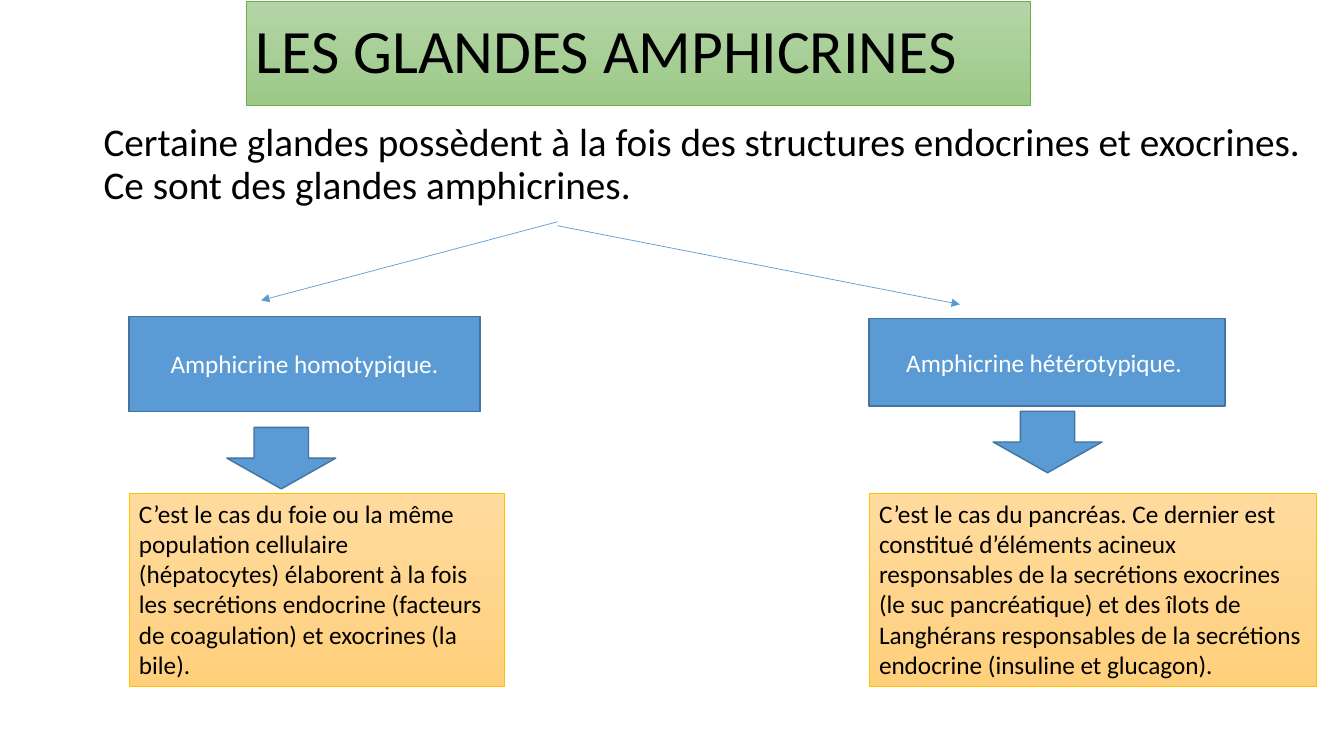
from lxml.etree import SubElement
from pptx import Presentation
from pptx.dml.color import RGBColor
from pptx.enum.shapes import MSO_CONNECTOR as Connector, MSO_SHAPE as Shape
from pptx.enum.text import MSO_ANCHOR as Anchor, PP_ALIGN as Align
from pptx.oxml.ns import qn
from pptx.util import Inches, Pt

BLACK = RGBColor(0x00, 0x00, 0x00)
WHITE = RGBColor(0xFF, 0xFF, 0xFF)
BLUE = RGBColor(0x5B, 0x9B, 0xD5)
DARK_BLUE = RGBColor(0x43, 0x73, 0x9E)
GREEN = RGBColor(0x70, 0xAD, 0x47)
GREEN_FADE = (RGBColor(0xB5, 0xD5, 0xA7), RGBColor(0x9C, 0xC9, 0x87))
GOLD = RGBColor(0xFF, 0xC0, 0x00)
GOLD_FADE = (RGBColor(0xFF, 0xDB, 0x9E), RGBColor(0xFF, 0xD0, 0x7C))

TITLE = "LES GLANDES AMPHICRINES"
INTRO = ("Certaine glandes possèdent à la fois des structures endocrines et "
         "exocrines. Ce sont des glandes amphicrines.")
LIVER = ("C’est le cas du foie ou la même population cellulaire (hépatocytes) "
         "élaborent à la fois les secrétions endocrine (facteurs de coagulation) "
         "et exocrines (la bile).")
PANCREAS = ("C’est le cas du pancréas. Ce dernier est constitué d’éléments acineux "
            "responsables de la secrétions exocrines (le suc pancréatique) et des "
            "îlots de Langhérans responsables de la secrétions endocrine "
            "(insuline et glucagon).")


def set_all(target, values):
    """Set every attribute named in a dict of format values."""
    for name, value in values.items():
        setattr(target, name, value)


def write(box, text, size, color, anchor=Anchor.TOP, **para_format):
    """Write one formatted paragraph into a box."""
    set_all(box.text_frame, {"word_wrap": True, "vertical_anchor": anchor})
    para = box.text_frame.paragraphs[0]
    set_all(para, {"alignment": Align.LEFT, **para_format})
    span = para.add_run()
    span.text = text
    set_all(span.font, {"name": "Calibri", "size": Pt(size)})
    span.font.color.rgb = color


def add_block(page, kind, area, line_color, line_width):
    """Add a preset shape with an outline and no shadow."""
    block = page.shapes.add_shape(kind, *map(Inches, area))
    block.shadow.inherit = False
    block.line.color.rgb = line_color
    block.line.width = Pt(line_width)
    return block


def add_blue(page, kind, area):
    """Add a plain blue shape."""
    block = add_block(page, kind, area, DARK_BLUE, 1)
    block.fill.solid()
    block.fill.fore_color.rgb = BLUE
    return block


def add_faded(page, area, fade, line_color):
    """Add a rectangle whose fill fades from top to bottom."""
    block = add_block(page, Shape.RECTANGLE, area, line_color, 0.5)
    block.fill.gradient()
    block.fill.gradient_angle = 270
    for stop, color in zip(block.fill.gradient_stops, fade):
        stop.color.rgb = color
    return block


def add_arrow(page, start, end):
    """Add a thin blue line that ends in a triangle."""
    arrow = page.shapes.add_connector(
        Connector.STRAIGHT, *map(Inches, (*start, *end)))
    arrow.line.color.rgb = BLUE
    arrow.line.width = Pt(0.5)
    SubElement(arrow.line._get_or_add_ln(), qn("a:tailEnd"), type="triangle")
    SubElement(arrow._element.spPr, qn("a:effectLst"))


def add_branch(page, arrow, name, name_area, down_area, detail, detail_area):
    """Add one gland type: arrow, name, down arrow and description."""
    add_arrow(page, *arrow)
    write(add_blue(page, Shape.RECTANGLE, name_area), name, 18, WHITE,
          Anchor.MIDDLE, alignment=Align.CENTER)
    add_blue(page, Shape.DOWN_ARROW, down_area)
    write(add_faded(page, detail_area, GOLD_FADE, GOLD), detail, 18, BLACK)


def main():
    """Build the slide and save it."""
    deck = Presentation()
    set_all(deck, {"slide_width": Inches(13.33), "slide_height": Inches(7.5)})
    page = deck.slides.add_slide(deck.slide_layouts[6])
    title = add_faded(page, (2.44, 0.01, 7.78, 1.04), GREEN_FADE, GREEN)
    write(title, TITLE, 44, BLACK, Anchor.MIDDLE, line_spacing=0.9)
    intro = page.shapes.add_textbox(*map(Inches, (0.93, 1.17, 12.4, 4.76)))
    write(intro, INTRO, 28, BLACK, line_spacing=0.9, space_before=Pt(10))
    add_branch(page, ((5.53, 2.2), (2.59, 2.98)),
               "Amphicrine homotypique.", (1.28, 3.14, 3.48, 0.94),
               (2.25, 4.24, 1.08, 0.61), LIVER, (1.28, 4.89, 3.72, 1.92))
    add_branch(page, ((5.53, 2.24), (9.52, 3.02)),
               "Amphicrine hétérotypique. ", (8.62, 3.16, 3.53, 0.87),
               (9.85, 4.08, 1.08, 0.61), PANCREAS, (8.62, 4.89, 4.44, 1.92))
    deck.save("out.pptx")


if __name__ == "__main__":
    main()
